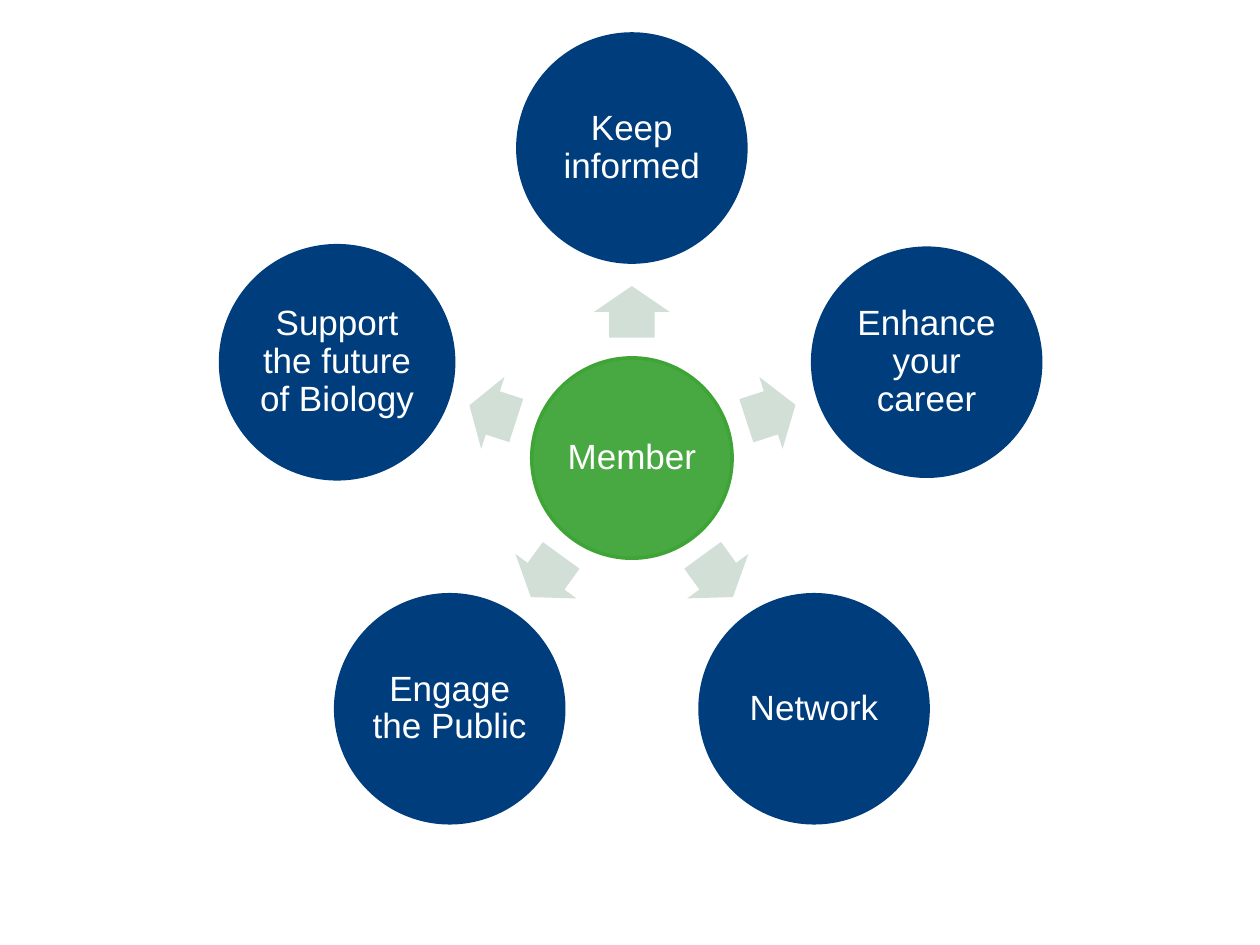
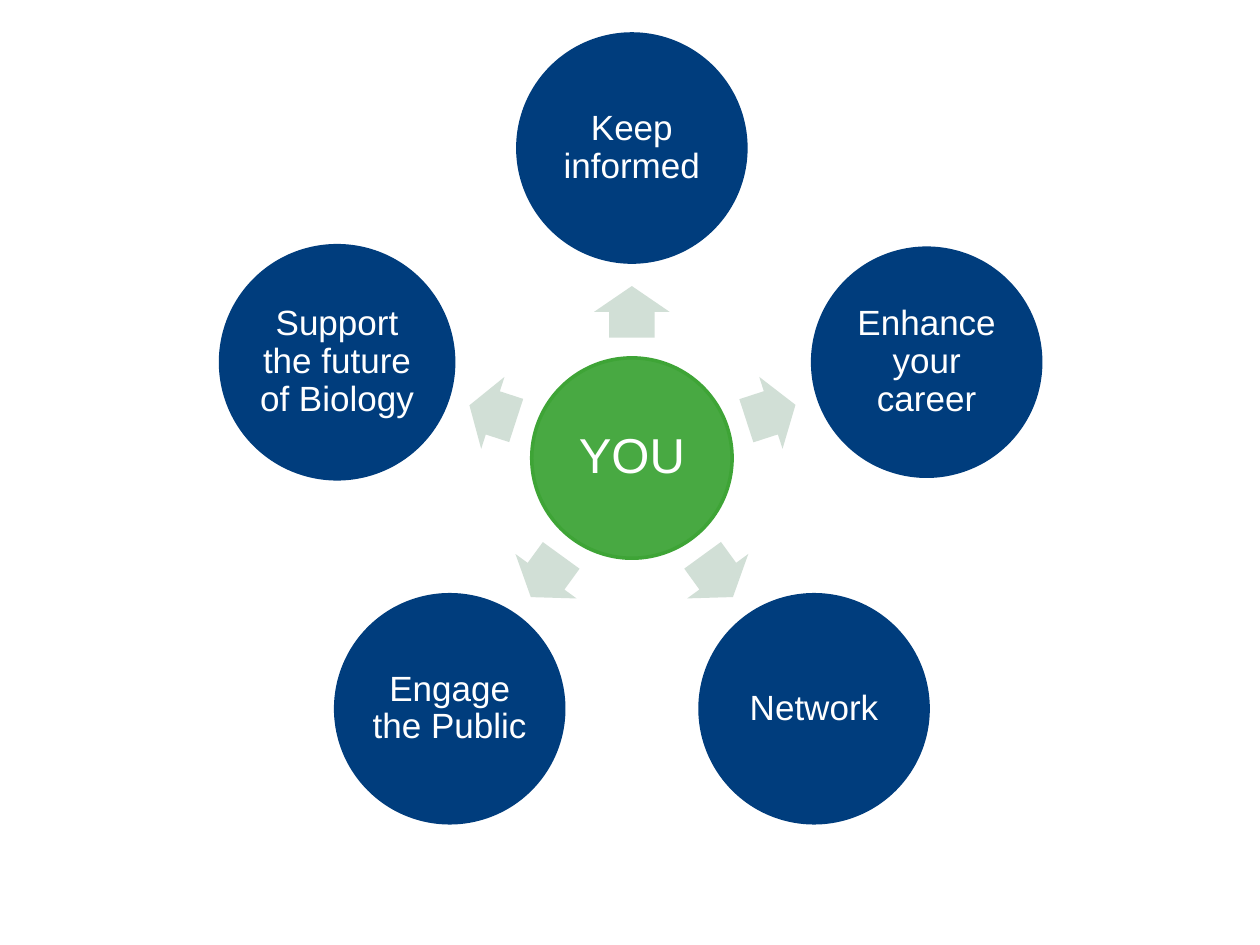
from math import cos, radians, sin

from pptx import Presentation
from pptx.dml.color import RGBColor
from pptx.enum.shapes import MSO_SHAPE as Shape
from pptx.enum.text import MSO_ANCHOR as Anchor, PP_ALIGN as Align
from pptx.util import Inches, Pt

# Hub word and its text size, one per slide
HUBS = [("Member", 20), ("YOU", 28)]
# Label, circle size and arrow length, clockwise from the top
GOALS = [
    ("Keep informed", 1.81, 0.41),
    ("Enhance your career", 1.81, 0.41),
    ("Network", 1.81, 0.41),
    ("Engage the Public", 1.81, 0.41),
    ("Support the future of Biology", 1.85, 0.39),
]

NAVY = RGBColor(0x00, 0x3D, 0x7D)
GREEN = RGBColor(0x48, 0xA9, 0x42)
LEAF = RGBColor(0x3E, 0xA4, 0x36)
SAGE = RGBColor(0xD1, 0xDF, 0xD6)
WHITE = RGBColor(0xFF, 0xFF, 0xFF)
FONT = "Arial"

MID_X, MID_Y = 5.015, 3.635
HUB_SIZE = 1.59
RING, ARROW_RING = 2.46, 1.16
ARROW_H = 0.6
INSET = 0.02


def add_solid(slide, kind, x, y, w, h, fill):
    """Add a flat filled shape centred on x, y."""
    shape = slide.shapes.add_shape(
        kind, Inches(x - w / 2), Inches(y - h / 2), Inches(w), Inches(h))
    shape.shadow.inherit = False
    shape.fill.solid()
    shape.fill.fore_color.rgb = fill
    return shape


def add_circle(slide, text, x, y, size, fill, edge, points=20):
    shape = add_solid(slide, Shape.OVAL, x, y, size, size, fill)
    shape.line.color.rgb = edge
    shape.line.width = Pt(2)
    frame = shape.text_frame
    frame.word_wrap = True
    frame.vertical_anchor = Anchor.MIDDLE
    frame.margin_left = frame.margin_right = Inches(INSET)
    frame.margin_top = frame.margin_bottom = Inches(INSET)
    para = frame.paragraphs[0]
    para.text = text
    para.alignment = Align.CENTER
    para.line_spacing = 0.9
    para.font.name = FONT
    para.font.size = Pt(points)
    para.font.color.rgb = WHITE


def add_arrow(slide, x, y, length, angle):
    shape = add_solid(slide, Shape.RIGHT_ARROW, x, y, length, ARROW_H, SAGE)
    shape.line.fill.background()
    shape.adjustments[0] = 0.6
    shape.adjustments[1] = 0.5
    shape.rotation = angle % 360


def polar(radius, angle):
    turn = radians(angle)
    return MID_X + radius * cos(turn), MID_Y + radius * sin(turn)


def add_wheel(slide, hub, points):
    add_circle(slide, hub, MID_X, MID_Y, HUB_SIZE, GREEN, LEAF, points)
    for i, (label, size, length) in enumerate(GOALS):
        angle = -90 + i * 360 / len(GOALS)
        add_arrow(slide, *polar(ARROW_RING, angle), length, angle)
        add_circle(slide, label, *polar(RING, angle), size, NAVY, NAVY)


def main():
    prs = Presentation()
    prs.slide_width, prs.slide_height = Inches(10), Inches(7.5)
    for hub, points in HUBS:
        add_wheel(prs.slides.add_slide(prs.slide_layouts[6]), hub, points)
    prs.save("out.pptx")


if __name__ == "__main__":
    main()
